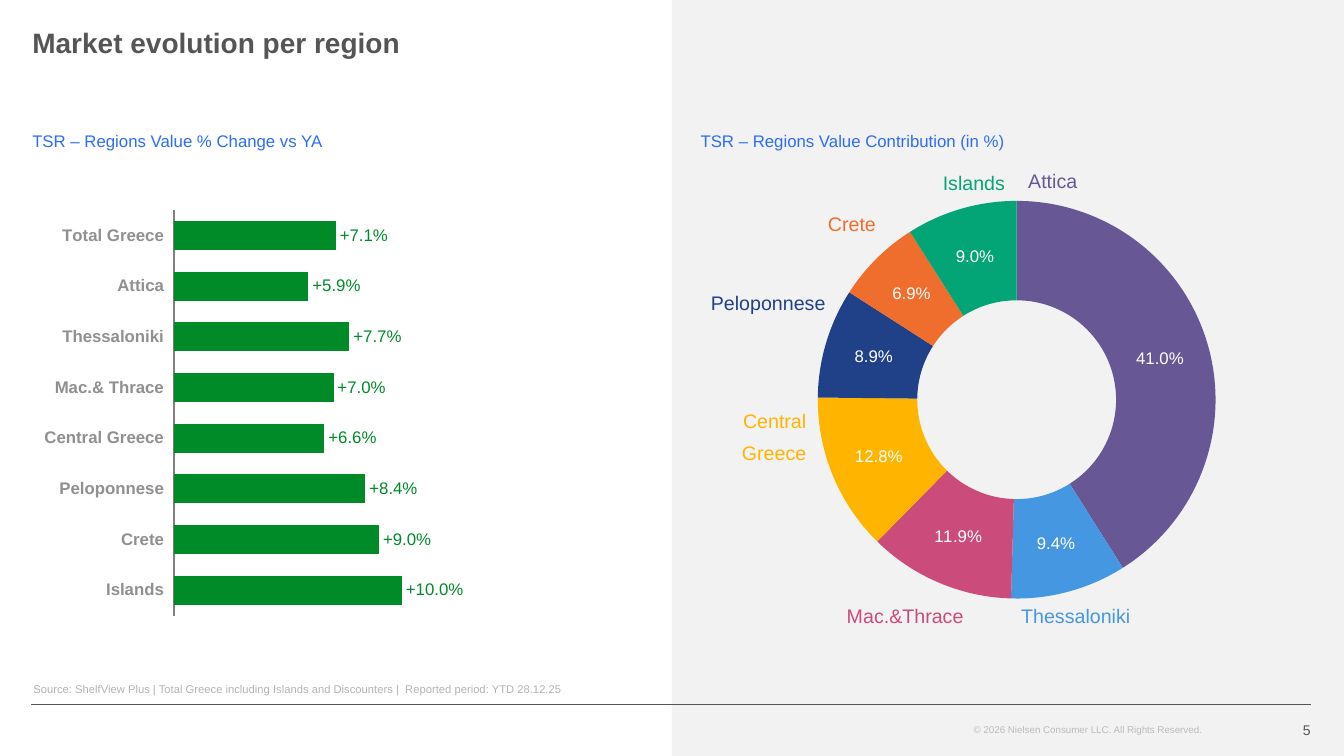
"""Build the slide on market evolution per region: growth bars and a contribution ring."""
from dataclasses import dataclass

from lxml import etree
from pptx import Presentation
from pptx.chart.data import CategoryChartData
from pptx.dml.color import RGBColor
from pptx.enum.chart import XL_CHART_TYPE, XL_LABEL_POSITION, XL_TICK_LABEL_POSITION, XL_TICK_MARK
from pptx.enum.shapes import MSO_CONNECTOR, MSO_SHAPE
from pptx.enum.text import MSO_ANCHOR, MSO_AUTO_SIZE, PP_ALIGN
from pptx.oxml import parse_xml
from pptx.oxml.ns import nsdecls, qn
from pptx.util import Inches, Pt

LEFT, RIGHT = PP_ALIGN.LEFT, PP_ALIGN.RIGHT
TOP, MIDDLE, BOTTOM = MSO_ANCHOR.TOP, MSO_ANCHOR.MIDDLE, MSO_ANCHOR.BOTTOM
NO_AUTOFIT = MSO_AUTO_SIZE.NONE
BAR, DOUGHNUT = XL_CHART_TYPE.BAR_CLUSTERED, XL_CHART_TYPE.DOUGHNUT
OUTSIDE_END = XL_LABEL_POSITION.OUTSIDE_END
LABELS_LOW, LABELS_NONE = XL_TICK_LABEL_POSITION.LOW, XL_TICK_LABEL_POSITION.NONE
NO_TICKS = XL_TICK_MARK.NONE
RECTANGLE, STRAIGHT = MSO_SHAPE.RECTANGLE, MSO_CONNECTOR.STRAIGHT


@dataclass(frozen=True)
class Theme:
    font: str = "Arial"
    ink: str = "555555"
    panel: str = "F2F2F2"
    white: str = "FFFFFF"
    heading: str = "2C6DF6"
    axis_text: str = "909090"
    axis_line: str = "808080"
    source: str = "B3B3B3"
    copyright: str = "BBBBBB"
    decline: str = "AA213F"
    growth: str = "008A28"
    title_size: int = 20
    region_size: int = 14
    body_size: int = 12
    small_size: int = 10
    source_size: int = 8
    copyright_size: int = 7


theme = Theme()
rgb = RGBColor.from_string

deck = Presentation()
deck.slide_width, deck.slide_height = Inches(13.33), Inches(7.5)
slide = deck.slides.add_slide(deck.slide_layouts[5])
shapes = slide.shapes


def area(left, top, width, height):
    """Turn percentages of the slide into lengths."""
    across, down = deck.slide_width / 100, deck.slide_height / 100
    return int(left * across), int(top * down), int(width * across), int(height * down)


def write(box, text, size, color, align=LEFT, anchor=TOP, wrap=True, bold=False, after=0):
    """Fill a text shape with evenly styled paragraphs."""
    frame = box.text_frame
    frame.text = text
    frame.auto_size = NO_AUTOFIT
    frame.word_wrap = wrap
    frame.vertical_anchor = anchor
    frame.margin_left = frame.margin_right = 0
    frame.margin_top = frame.margin_bottom = Inches(0.05)
    for paragraph in frame.paragraphs:
        paragraph.alignment = align
        paragraph.space_after = Pt(after)
        font = paragraph.font
        font.name, font.size, font.bold = theme.font, Pt(size), bold
        font.color.rgb = rgb(color)


panel = shapes.add_shape(RECTANGLE, *area(50, 0, 50, 100))
panel.shadow.inherit = False
panel.fill.solid()
panel.fill.fore_color.rgb = rgb(theme.panel)
panel.line.fill.background()

rule_left, rule_top, rule_width, _ = area(2.33, 93.2, 95.25, 0)
footer_rule = shapes.add_connector(STRAIGHT, rule_left, rule_top, rule_left + rule_width, rule_top)
footer_rule.line.color.rgb = rgb(theme.ink)
footer_rule.line.width = Pt(1)
etree.SubElement(footer_rule._element.spPr, qn("a:effectLst"))

title = shapes.title
title.left, title.top, title.width, title.height = area(2.4, 2.67, 45.45, 5.73)
write(title, "Market evolution per region", theme.title_size, theme.ink, anchor=MIDDLE, bold=True)

captions = [
    ((72.45, 95.07, 21.3, 2.93), "© 2026 Nielsen Consumer LLC. All Rights Reserved.",
     theme.copyright_size, theme.copyright, LEFT, TOP),
    ((90.08, 93.87, 7.43, 5.33), "5", theme.small_size, theme.ink, RIGHT, MIDDLE),
    ((2.48, 87.33, 95.03, 5.33),
     "Source: ShelfView Plus | Total Greece including Islands and Discounters |  Reported period: YTD 28.12.25",
     theme.source_size, theme.source, LEFT, BOTTOM),
    ((2.4, 16.67, 45.45, 6.4), "TSR – Regions Value % Change vs YA",
     theme.body_size, theme.heading, LEFT, TOP),
    ((52.13, 16.67, 45.75, 6.4), "TSR – Regions Value Contribution (in %)",
     theme.body_size, theme.heading, LEFT, TOP),
]
for place, text, size, color, align, anchor in captions:
    write(shapes.add_textbox(*area(*place)), text, size, color, align, anchor)

changes = {
    "Total Greece": 7.1, "Attica": 5.9, "Thessaloniki": 7.7, "Mac.& Thrace": 7.0,
    "Central Greece": 6.6, "Peloponnese": 8.4, "Crete": 9.0, "Islands": 10.0,
}
change_data = CategoryChartData()
change_data.categories = list(changes)
change_data.add_series("Series 1", [0] * len(changes))
change_data.add_series("Series 2", list(changes.values()))
growth = shapes.add_chart(BAR, *area(2.4, 26.67, 45.38, 55.87), change_data).chart

regions = [
    ("Attica", 41.0, "675895", 76.5, 21.73, LEFT),
    ("Thessaloniki", 9.4, "4697E2", 75.98, 79.2, LEFT),
    ("Mac.&Thrace", 11.9, "CB4B7A", 64.2, 79.2, RIGHT),
    ("Central\nGreece", 12.8, "FFB500", 52.5, 53.47, RIGHT),
    ("Peloponnese", 8.9, "204188", 53.93, 37.87, RIGHT),
    ("Crete", 6.9, "F06E2D", 57.68, 27.33, RIGHT),
    ("Islands", 9.0, "03A577", 67.28, 22, RIGHT),
]
share_data = CategoryChartData()
share_data.categories = [str(number) for number in range(1, len(regions) + 1)]
share_data.add_series("Series 1", [region[1] for region in regions])
contribution = shapes.add_chart(DOUGHNUT, *area(53.55, 24.4, 44.78, 58.13), share_data).chart

for chart in (growth, contribution):
    chart.has_legend = chart.has_title = False
    chart.font.name, chart.font.size = theme.font, Pt(theme.small_size)
    chart.font.color.rgb = rgb(theme.ink)

bars = growth.plots[0]
bars.gap_width, bars.overlap, bars.vary_by_categories = 75, 100, False
ring = contribution.plots[0]
ring.vary_by_categories = True
change_format = r"\+0.0\%;\-0.0\%;;"
labelled = [
    (bars.series[0], change_format, theme.decline),
    (bars.series[1], change_format, theme.growth),
    (ring.series[0], r"0.0\%", theme.white),
]
for series, number_format, color in labelled:
    labels = series.data_labels
    labels.show_value = True
    labels.number_format, labels.number_format_is_linked = number_format, False
    labels.font.name, labels.font.size = theme.font, Pt(theme.body_size)
    labels.font.color.rgb = rgb(color)
for series, _, color in labelled[:2]:
    series.format.fill.solid()
    series.format.fill.fore_color.rgb = rgb(color)
    series.invert_if_negative = False
    series.data_labels.position = OUTSIDE_END

region_axis, change_axis = growth.category_axis, growth.value_axis
for axis in (region_axis, change_axis):
    axis.has_major_gridlines = False
    axis.major_tick_mark = axis.minor_tick_mark = NO_TICKS
    font = axis.tick_labels.font
    font.name, font.size = theme.font, Pt(theme.body_size)
    font.color.rgb = rgb(theme.axis_text)
region_axis.reverse_order = True
region_axis.tick_label_position = LABELS_LOW
region_axis.tick_labels.font.bold = True
region_axis.format.line.color.rgb = rgb(theme.axis_line)
region_axis.format.line.width = Pt(1.5)
change_axis.minimum_scale, change_axis.maximum_scale = 0, 20
change_axis.tick_label_position = LABELS_NONE
change_axis.format.line.fill.background()

ring._element.find(qn("c:holeSize")).set("val", "70")
plot_area = ring._element.getparent()
for automatic in plot_area.findall(qn("c:layout")):
    plot_area.remove(automatic)
frame_shares = {"x": 0.163, "y": 0.037, "w": 0.661, "h": 0.906}
modes = '<c:xMode val="edge"/><c:yMode val="edge"/>'
extents = "".join(f'<c:{side} val="{share}"/>' for side, share in frame_shares.items())
plot_area.insert(0, parse_xml(
    f'<c:layout {nsdecls("c")}><c:manualLayout><c:layoutTarget val="inner"/>'
    f"{modes}{extents}</c:manualLayout></c:layout>"))

for index, (name, _, color, left, top, align) in enumerate(regions):
    slice_format = ring.series[0].points[index].format
    slice_format.fill.solid()
    slice_format.fill.fore_color.rgb = rgb(color)
    slice_format.line.fill.background()
    region_label = shapes.add_textbox(*area(left, top, 7.5, 5.73))
    write(region_label, name, theme.region_size, color, align, wrap=False, after=6)

deck.save("out.pptx")
